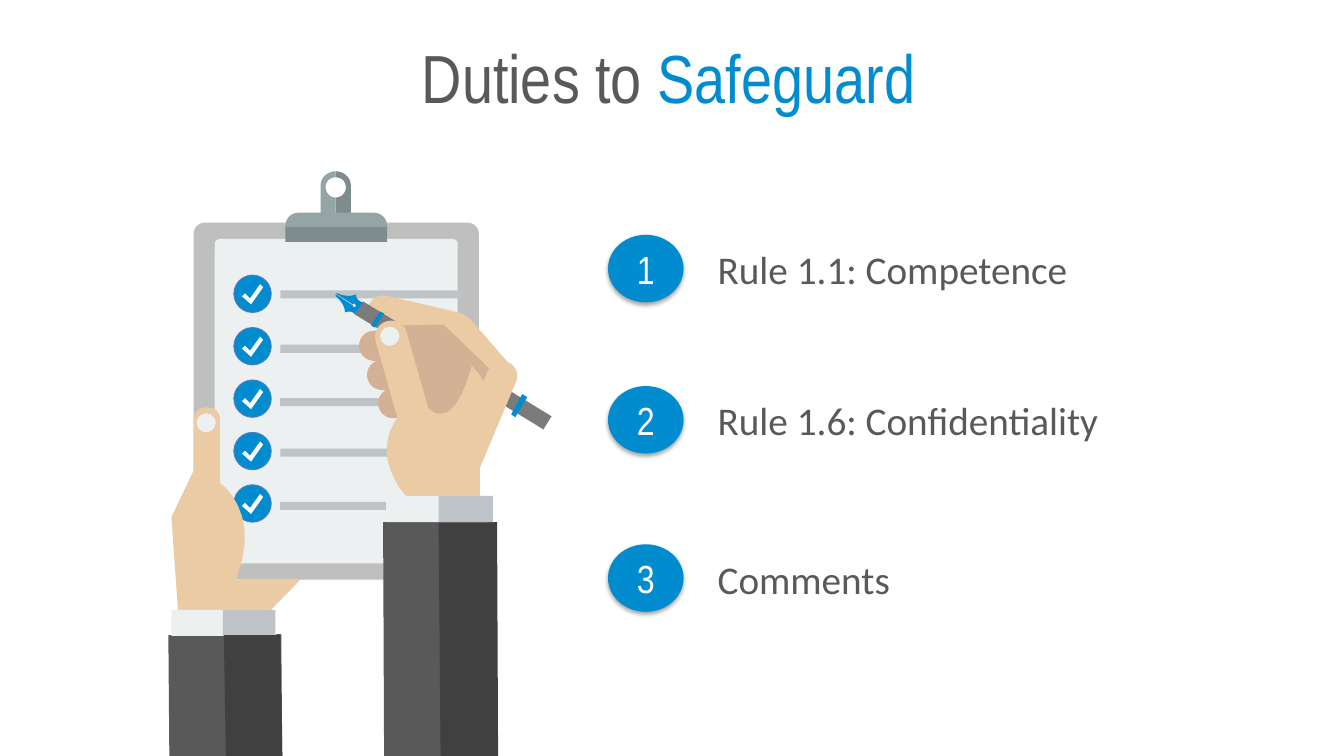
import math

from lxml import etree
from pptx import Presentation
from pptx import util as u
from pptx.dml.color import RGBColor
from pptx.enum import shapes, text
from pptx.oxml import ns

BLUE, GREY, WHITE = "018CCF", "595959", "FFFFFF"
SKIN, SKIN_SHADE = "EBCBA3", "D4B194"
PAPER, RULE_GREY, DARK, PEN = "ECF0F1", "BDC3C7", "404040", "7B7B7B"
CLIP, CLIP_SHADE, BOARD = "95A5A6", "7F8C8D", "BFBFBF"
HEADING, BODY = "Arial Narrow", "Calibri"
PRESET = shapes.MSO_SHAPE
BOTTOM = 7.5


def inch(value):
    """Layout units are inches; lengths are handed over as Cm."""
    return u.Cm(value * 2.54)


def colour(hex_string):
    return RGBColor.from_string(hex_string)


def flatten(outline, steps=10):
    """Pairs are corners; six numbers are a Bezier curve from the last point."""
    points = [outline[0]]
    for part in outline[1:]:
        if len(part) == 2:
            points.append(part)
            continue
        controls = [points[-1], part[:2], part[2:4], part[4:]]
        for step in range(1, steps + 1):
            t = step / steps
            weights = [math.comb(3, k) * t**k * (1 - t)**(3 - k) for k in range(4)]
            points.append(tuple(sum(w * c[axis] for w, c in zip(weights, controls))
                                for axis in (0, 1)))
    return points


class SlideBuilder:
    def __init__(self, presentation):
        self.slide = presentation.slides.add_slide(presentation.slide_layouts[5])
        self.target = self.slide.shapes

    def start_group(self):
        self.target = self.slide.shapes.add_group_shape().shapes

    def paint(self, shape, fill, line=None):
        shape.shadow.inherit = False
        shape.fill.solid()
        shape.fill.fore_color.rgb = colour(fill)
        if line:
            shape.line.color.rgb = colour(line)
            shape.line.width = u.Pt(0.75)
        else:
            shape.line.fill.background()
        return shape

    def preset(self, kind, left, top, width, height, fill, line=None):
        shape = self.target.add_shape(kind, *map(inch, (left, top, width, height)))
        return self.paint(shape, fill, line)

    def rect(self, left, top, width, height, fill):
        return self.preset(PRESET.RECTANGLE, left, top, width, height, fill)

    def ellipse(self, left, top, width, height, fill, line=None):
        return self.preset(PRESET.OVAL, left, top, width, height, fill, line)

    def rounded(self, left, top, width, height, radius, fill):
        shape = self.preset(PRESET.ROUNDED_RECTANGLE, left, top, width, height, fill)
        shape.adjustments[0] = radius / min(width, height)
        return shape

    def finger(self, start, end, radius, fill):
        (x1, y1), (x2, y2) = start, end
        length = math.dist(start, end) + 2 * radius
        shape = self.rounded((x1 + x2 - length) / 2, (y1 + y2) / 2 - radius,
                             length, 2 * radius, radius, fill)
        shape.rotation = math.degrees(math.atan2(y2 - y1, x2 - x1))

    def freeform(self, outline, fill):
        points = [(inch(x), inch(y)) for x, y in flatten(outline)]
        builder = self.target.build_freeform(*points[0])
        builder.add_line_segments(points[1:], close=True)
        self.paint(builder.convert_to_shape(), fill)

    def soft_shadow(self, shape):
        effects = shape.element.spPr.find(ns.qn("a:effectLst"))
        shadow = etree.SubElement(effects, ns.qn("a:outerShdw"), rotWithShape="0",
                                  blurRad=str(u.Pt(3.1)), dist=str(u.Pt(1.8)), dir="5400000")
        black = etree.SubElement(shadow, ns.qn("a:srgbClr"), val="000000")
        etree.SubElement(black, ns.qn("a:alpha"), val="35000")

    def add_runs(self, shape, runs, size, font, align):
        frame = shape.text_frame
        frame.word_wrap = True
        frame.vertical_anchor = text.MSO_ANCHOR.MIDDLE
        paragraph = frame.paragraphs[0]
        paragraph.alignment = align
        for words, hex_string in runs:
            run = paragraph.add_run()
            run.text = words
            run.font.size = u.Pt(size)
            run.font.name = font
            run.font.color.rgb = colour(hex_string)

    def title(self, runs):
        title = self.slide.shapes.title
        title.left, title.top, title.width, title.height = map(inch, (0.52, 0.42, 12.22, 0.67))
        self.add_runs(title, runs, 48.6, HEADING, text.PP_ALIGN.CENTER)

    def numbered_item(self, number, words, top):
        self.start_group()
        label = self.target.add_textbox(*map(inch, (7.02, top, 6.14, 1.04)))
        self.add_runs(label, [(words, GREY)], 28, BODY, text.PP_ALIGN.LEFT)
        badge = self.ellipse(6.03, top + 0.18, 0.75, 0.67, BLUE)
        self.soft_shadow(badge)
        self.add_runs(badge, [(str(number), WHITE)], 28, HEADING, text.PP_ALIGN.CENTER)


def draw_clipboard(page):
    # Clip ring: the left half mirrors the right one
    axis = 3.33
    ring = [(axis, 1.7), (axis, 1.76), (3.39, 1.76, 3.43, 1.8, 3.43, 1.86),
            (3.43, 1.91, 3.39, 1.96, axis, 1.96), (axis, 2.36),
            (3.41, 2.36, 3.48, 2.29, 3.48, 2.21), (3.48, 1.84),
            (3.48, 1.76, 3.41, 1.7, axis, 1.7)]
    page.freeform(ring, CLIP_SHADE)
    page.freeform([(2 * axis - x, y) for x, y in flatten(ring)], CLIP)

    # Board, clip and paper
    page.rounded(1.92, 2.21, 2.83, 3.54, 0.11, BOARD)
    page.rounded(2.83, 2.11, 1.01, 0.29, 0.13, CLIP)
    page.rounded(2.13, 2.37, 2.41, 3.22, 0.05, PAPER)
    page.rect(2.83, 2.25, 1.01, 0.15, CLIP_SHADE)

    # Checklist
    for top, width in ((2.88, 1.81), (3.42, 1.81), (3.95, 1.73), (4.45, 1.81), (4.98, 1.73)):
        page.rect(2.78, top, width, 0.08, RULE_GREY)
    tick = [(0.08, 0.21), (0.11, 0.18), (0.16, 0.23), (0.26, 0.09), (0.29, 0.12), (0.17, 0.29)]
    for row in range(5):
        top = 2.73 + 0.52 * row
        page.ellipse(2.32, top, 0.37, 0.37, BLUE, line="4B7EBC")
        page.freeform([(2.32 + x, top + y) for x, y in tick], WHITE)


def draw_writing_hand(page):
    # Index finger, pen and palm
    page.finger((3.8, 3.08), (4.53, 3.25), 0.15, SKIN)
    page.freeform([(3.6, 2.99), (5.47, 4.13), (5.39, 4.26), (3.52, 3.12)], PEN)
    page.finger((4.56, 3.26), (4.97, 3.73), 0.14, SKIN)
    page.freeform([(4.61, 4.61), (4.94, 3.74), (4.4, 3.22), (3.92, 3.23), (4.15, 4.42)],
                  SKIN_SHADE)

    # Folded fingers
    for start, end in (((3.71, 3.43), (4.45, 3.52)), ((3.79, 3.72), (4.55, 3.69)),
                       ((3.9, 4.0), (4.61, 3.77))):
        page.finger(start, end, 0.15, SKIN_SHADE)

    # Back of the hand
    page.freeform([(4.64, 4.38), (4.82, 4.62, 4.55, 5, 4.34, 5.04),
                   (4.13, 5.08, 3.93, 4.88, 3.85, 4.59), (3.78, 4.3, 3.97, 4.06, 4.08, 4.04),
                   (4.19, 4.02, 4.47, 4.14, 4.64, 4.38)], SKIN)
    page.finger((4.61, 4.61), (4.98, 3.73), 0.15, SKIN)
    page.freeform([(4.68, 3.63), (4.64, 3.76, 4.5, 4.28, 4.24, 4.05),
                   (3.99, 3.82, 4.27, 4.67, 4.27, 4.67), (4.77, 4.41),
                   (4.77, 4.41, 5.03, 3.96, 4.68, 3.63)], SKIN)

    # Nib and pen bands
    page.freeform([(3.52, 3.12), (3.51, 3.1, 3.48, 3.08, 3.42, 3.1),
                   (3.43, 3.04, 3.36, 2.96, 3.33, 2.94), (3.33, 2.92), (3.5, 3.03),
                   (3.5, 3.04), (3.51, 3.05, 3.52, 3.05, 3.53, 3.04),
                   (3.53, 3.03, 3.53, 3.02, 3.52, 3.02), (3.52, 3.01, 3.51, 3.01, 3.5, 3.02),
                   (3.33, 2.91), (3.35, 2.91), (3.38, 2.93, 3.48, 2.95, 3.53, 2.92),
                   (3.53, 2.96, 3.56, 2.99, 3.6, 3)], BLUE)
    page.freeform([(3.77, 3.09), (3.81, 3.11), (3.72, 3.25), (3.68, 3.23)], BLUE)
    page.freeform([(5.18, 3.91), (5.23, 3.94), (5.11, 4.14), (5.07, 4.11)], BLUE)

    # Wrist, thumb and nail
    page.freeform([(4.76, 4.44), (4.04, 4.52), (4.02, 4.98), (4.76, 4.97)], SKIN)
    page.finger((4.11, 4.15), (3.88, 3.34), 0.16, SKIN)
    page.ellipse(3.77, 3.24, 0.19, 0.19, PAPER)

    # Sleeve and cuff
    page.freeform([(3.8, 5.18), (4.92, 5.18), (4.93, BOTTOM), (3.81, BOTTOM)], GREY)
    page.freeform([(4.35, 5.18), (4.93, 5.18), (4.94, BOTTOM), (4.37, BOTTOM)], DARK)
    page.rect(3.83, 4.92, 1.01, 0.26, PAPER)
    page.rect(4.35, 4.92, 0.54, 0.26, RULE_GREY)


def draw_holding_hand(page):
    # Hand and nail
    page.freeform([(1.7, 5.13), (1.92, 4.67), (1.92, 4.22), (1.92, 4.22, 1.89, 4.04, 2.05, 4.04),
                   (2.21, 4.04, 2.18, 4.2, 2.18, 4.2), (2.18, 4.79),
                   (2.18, 4.79, 2.61, 5.08, 2.34, 5.75), (2.98, 5.75), (2.62, 6.12),
                   (1.77, 6.12)], SKIN)
    page.ellipse(1.95, 4.1, 0.19, 0.19, PAPER)

    # Sleeve and cuff
    page.freeform([(1.67, 6.3), (2.79, 6.29), (2.8, BOTTOM), (1.68, BOTTOM)], GREY)
    page.rect(1.7, 6.05, 1.04, 0.26, PAPER)
    page.rect(2.21, 6.05, 0.52, 0.26, RULE_GREY)
    page.freeform([(2.22, 6.3), (2.78, 6.3), (2.8, BOTTOM), (2.24, BOTTOM)], DARK)


def main():
    presentation = Presentation()
    presentation.slide_width, presentation.slide_height = inch(13.33), inch(BOTTOM)
    page = SlideBuilder(presentation)
    page.title([("Duties to ", GREY), ("Safeguard", BLUE)])

    # Illustration
    page.start_group()
    draw_clipboard(page)
    draw_writing_hand(page)
    draw_holding_hand(page)

    # Numbered duties
    duties = (("Rule 1.1: Competence", 2.15), ("Rule 1.6: Confidentiality", 3.65),
              ("Comments", 5.22))
    for number, (words, top) in enumerate(duties, start=1):
        page.numbered_item(number, words, top)

    presentation.save("out.pptx")


if __name__ == "__main__":
    main()
